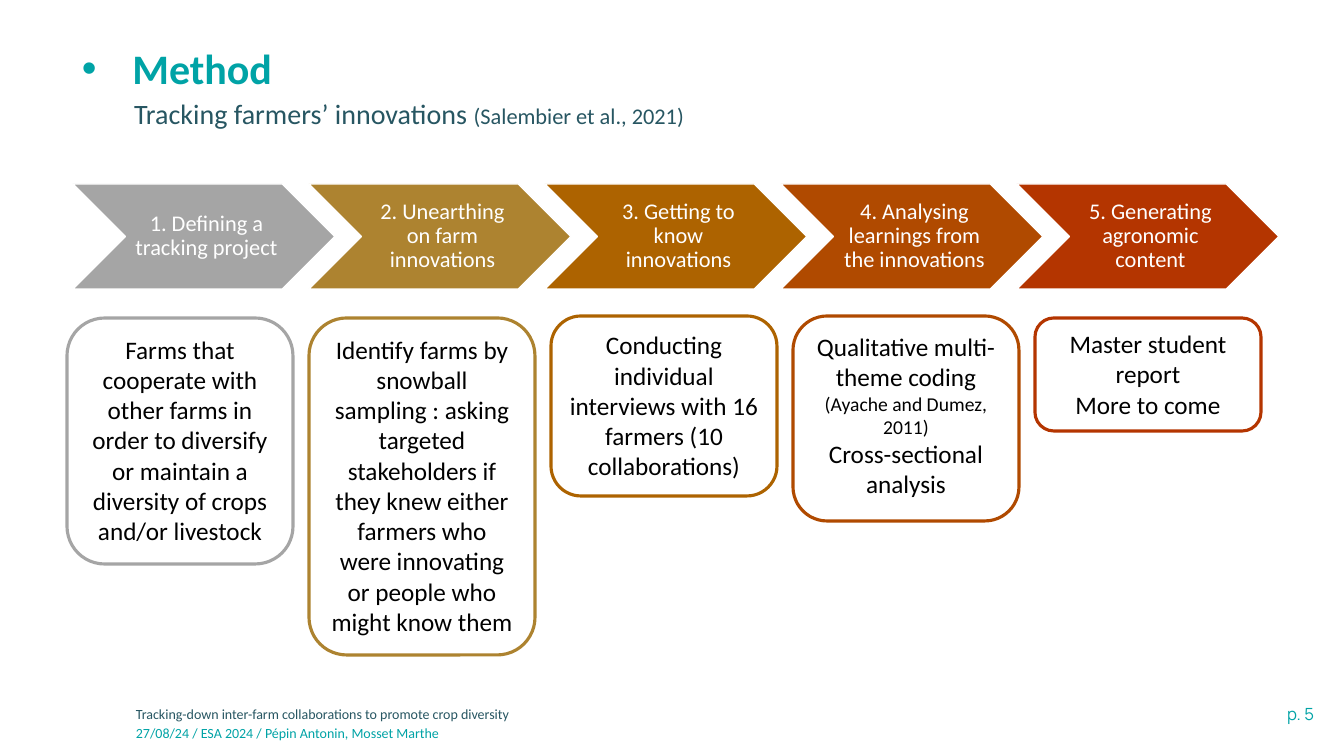
"""Build the Method slide: five chevron steps, each with a detail box below."""
from lxml import etree
from pptx import Presentation
from pptx.dml.color import RGBColor
from pptx.enum.shapes import MSO_SHAPE
from pptx.enum.text import MSO_ANCHOR, MSO_AUTO_SIZE, PP_ALIGN
from pptx.oxml.ns import qn
from pptx.util import Emu, Pt

LEFT, CENTER, RIGHT = PP_ALIGN.LEFT, PP_ALIGN.CENTER, PP_ALIGN.RIGHT
TOP, MIDDLE = MSO_ANCHOR.TOP, MSO_ANCHOR.MIDDLE
CHEVRON, ROUNDED = MSO_SHAPE.CHEVRON, MSO_SHAPE.ROUNDED_RECTANGLE
NO_FIT = MSO_AUTO_SIZE.NONE

TEAL = RGBColor(0x00, 0xA3, 0xA6)
DARK_TEAL = RGBColor(0x27, 0x56, 0x62)
WHITE = RGBColor(0xFF, 0xFF, 0xFF)
BLACK = RGBColor(0x00, 0x00, 0x00)
GREY = RGBColor(0xA5, 0xA5, 0xA5)
SAND = RGBColor(0xAD, 0x83, 0x30)
OCHRE = RGBColor(0xAD, 0x63, 0x00)
RUST = RGBColor(0xB0, 0x4A, 0x00)
BRICK = RGBColor(0xB4, 0x35, 0x00)

PX = 914400 / 100.8


def px(*lengths):
    """Turn pixel lengths into EMU."""
    return [Emu(round(length * PX)) for length in lengths]


def write(para, text, size=18, color=BLACK, font="Calibri", bold=False,
          align=LEFT, spacing=1.0):
    """Add a formatted span of text to a paragraph."""
    para.alignment = align
    para.line_spacing = spacing
    para.space_before = Pt(0)
    span = para.add_run()
    span.text = text
    span.font.name = font
    span.font.size = Pt(size)
    span.font.bold = bold
    span.font.color.rgb = color


deck = Presentation()
deck.slide_width, deck.slide_height = px(1344, 756)
page = deck.slides.add_slide(deck.slide_layouts[0])

title, subtitle = page.placeholders
headings = [
    (title, (82, 22, 1126, 98), MIDDLE, (0, 5, 10, 5)),
    (subtitle, (124, 95, 1085, 75), TOP, (10, 5, 10, 5)),
]
for box, place, anchor, insets in headings:
    box.left, box.top, box.width, box.height = px(*place)
    frame = box.text_frame
    frame.auto_size = NO_FIT
    frame.word_wrap = True
    frame.vertical_anchor = anchor
    (frame.margin_left, frame.margin_top,
     frame.margin_right, frame.margin_bottom) = px(*insets)

para = title.text_frame.paragraphs[0]
write(para, "Method", size=30, color=TEAL, bold=True, spacing=0.9)
properties = para._p.get_or_add_pPr()
properties.set("marL", "457200")
properties.set("indent", "-457200")
etree.SubElement(properties, qn("a:buFont")).set("typeface", "Arial")
etree.SubElement(properties, qn("a:buChar")).set("char", "•")

para = subtitle.text_frame.paragraphs[0]
write(para, "Tracking farmers’ innovations ", size=20, color=DARK_TEAL, spacing=0.9)
write(para, "(Salembier et al., 2021)", size=16, color=DARK_TEAL, spacing=0.9)

steps = [
    ("1. Defining a tracking project", GREY, 318, 246,
     [[("Farms that cooperate with other farms in order to diversify or "
        "maintain a diversity of crops and/or livestock", 18)]]),
    ("2. Unearthing on farm innovations", SAND, 318, 337,
     [[("Identify farms by snowball sampling : asking targeted stakeholders "
        "if they knew either farmers who were innovating or people who might "
        "know them", 18)]]),
    ("3. Getting to know innovations", OCHRE, 316, 180,
     [[("Conducting individual interviews with 16 farmers "
        "(10 collaborations)", 18)]]),
    ("4. Analysing learnings from the innovations", RUST, 316, 205,
     [[("Qualitative multi-theme coding ", 18), ("(Ayache and Dumez, 2011)", 14)],
      [("Cross-sectional analysis", 18)]]),
    ("5. Generating agronomic content", BRICK, 318, 113,
     [[("Master student report", 18)], [("More to come", 18)]]),
]
for index, (label, color, top, height, details) in enumerate(steps):
    chevron = page.shapes.add_shape(CHEVRON, *px(73 + 236 * index, 184, 262, 105))
    chevron.shadow.inherit = False
    chevron.fill.solid()
    chevron.fill.fore_color.rgb = color
    chevron.line.color.rgb = WHITE
    chevron.line.width = Pt(1)
    frame = chevron.text_frame
    frame.word_wrap = True
    frame.vertical_anchor = MIDDLE
    (frame.margin_left, frame.margin_top,
     frame.margin_right, frame.margin_bottom) = px(7, 2, 2, 2)
    write(frame.paragraphs[0], label, size=16, color=WHITE, align=CENTER, spacing=0.9)

    box = page.shapes.add_shape(ROUNDED, *px(67 + 242 * index, top, 226, height))
    box.shadow.inherit = False
    box.fill.background()
    box.line.color.rgb = color
    box.line.width = Pt(2.25)
    frame = box.text_frame
    frame.word_wrap = True
    frame.vertical_anchor = TOP
    for number, spans in enumerate(details):
        para = frame.add_paragraph() if number else frame.paragraphs[0]
        for text, size in spans:
            write(para, text, size=size, align=CENTER)

footers = [
    ("p. 5", (1094, 699, 230, 30),
     {"size": 12, "color": TEAL, "font": "Manrope", "align": RIGHT}),
    ("Tracking-down inter-farm collaborations to promote crop diversity",
     (126, 701, 740, 28), {"size": 10, "color": DARK_TEAL}),
    ("27/08/24 / ESA 2024 / Pépin Antonin, Mosset Marthe",
     (126, 720, 740, 27), {"size": 10, "color": TEAL}),
]
for text, place, style in footers:
    box = page.shapes.add_textbox(*px(*place))
    box.text_frame.word_wrap = True
    write(box.text_frame.paragraphs[0], text, **style)

deck.save("out.pptx")
